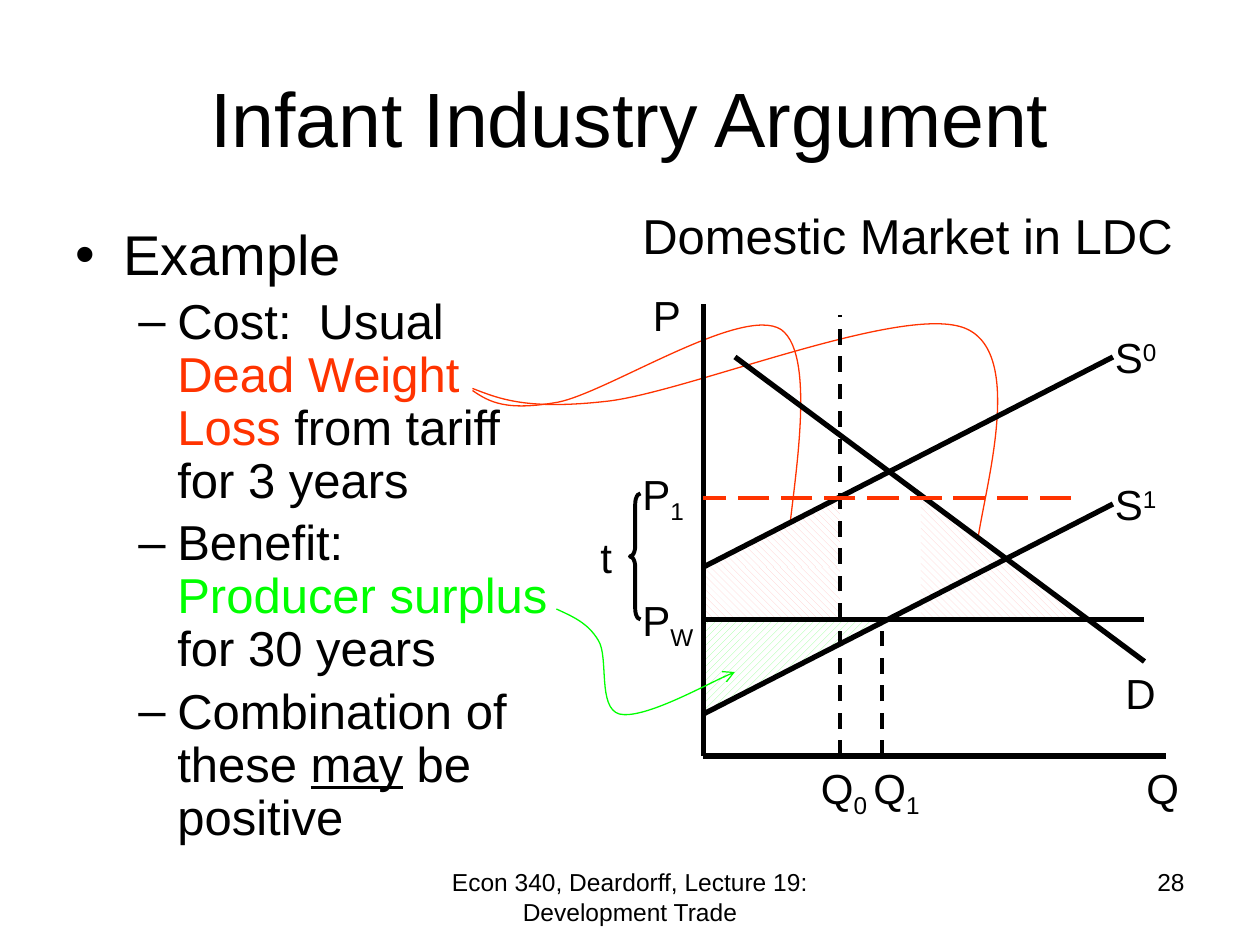
from lxml import etree
from pptx import Presentation
from pptx import util as u
from pptx.dml.color import RGBColor
from pptx.enum import dml, shapes, text
from pptx.oxml import ns

COLORS = {"black": "000000", "white": "FFFFFF", "red": "FF3300", "green": "00FF00",
          "pink": "FFCCCC", "mint": "99FF99"}
FONT = "Arial"
GRID = 12
SUB, SUPER = -25000, 30000

TITLE = ("Infant Industry Argument", (6, 3.6, 108, 15))
BODY_AREA = (6, 21, 49, 59.4)
BODY = [
    (0, [("Example", "black", False)]),
    (1, [("Cost:  Usual ", "black", False), ("Dead Weight Loss", "red", False),
         (" from tariff for 3 years", "black", False)]),
    (1, [("Benefit:  ", "black", False), ("Producer surplus", "green", False),
         (" for 30 years", "black", False)]),
    (1, [("Combination of these ", "black", False), ("may", "black", True),
         (" be positive", "black", False)]),
]
LEVELS = [("•", 32, 0.38, 0.38, 0), ("–", 28, 0.81, 0.31, 5.6)]

CAPTIONS = [
    ("Econ 340, Deardorff, Lecture 19: Development Trade", (41, 82, 38, 6.25), 14, "CENTER"),
    ("28", (86, 82, 28, 6.25), 14, "RIGHT"),
    ("Domestic Market in LDC", (60, 19, 54, 6.8), 28, "LEFT"),
]
LABELS = [
    ("P", "", 0, 61, 27, 8), ("P", "1", SUB, 60, 44, 8), ("P", "W", SUB, 60, 56, 8),
    ("t", "", 0, 56, 50, 6), ("Q", "0", SUB, 77, 72, 8), ("Q", "1", SUB, 82, 72, 8),
    ("Q", "", 0, 108, 72, 6), ("D", "", 0, 106, 63, 6),
    ("S", "0", SUPER, 105, 31, 7), ("S", "1", SUPER, 105, 45, 7),
]

AXIS, RIGHT, BASE = 67, 109, 72
WORLD_PRICE, TARIFF_PRICE = 59, 47.4
LINES = [
    ((AXIS, 29), (AXIS, BASE), "black", 3, None),
    ((111, BASE), (AXIS, BASE), "black", 3, None),
    ((RIGHT, WORLD_PRICE), (AXIS, WORLD_PRICE), "black", 3, None),
    ((106, 48), (AXIS, 68), "black", 3, None),
    ((106, 34), (AXIS, 54), "black", 3, None),
    ((RIGHT, 63), (70, 34), "black", 3, None),
    ((80, BASE), (80, 30), "black", 2.25, "DASH"),
    ((84, BASE), (84, WORLD_PRICE), "black", 2.25, "DASH"),
    ((102, TARIFF_PRICE), (AXIS, TARIFF_PRICE), "red", 2.25, "LONG_DASH"),
]
AREAS = [
    ("RIGHT_TRIANGLE", (AXIS, WORLD_PRICE, 17, 9), "mint", "WIDE_UPWARD_DIAGONAL", "flipV"),
    ("RECTANGLE", (AXIS, 54, 13, 5), "pink", "WIDE_DOWNWARD_DIAGONAL", None),
    ("RIGHT_TRIANGLE", (87.7, 47, 16.3, 12), "pink", "WIDE_DOWNWARD_DIAGONAL", None),
    ("RIGHT_TRIANGLE", (AXIS, 47, 13, 7), "pink", "WIDE_DOWNWARD_DIAGONAL", "flipH"),
]
BRACE = (60, 47, 1, 12)
LOSS_CURVES = [
    [(45, 37), (47.6, 38), (50.2, 39.1), (58, 38.2), (65.9, 37.2), (86.2, 28.8),
     (92, 31.3), (97.8, 33.8), (92.9, 49.4), (93, 53)],
    [(45, 37.2), (46.6, 38.3), (48.2, 39.2), (53.2, 38.3), (58, 37.3), (70.7, 29),
     (74.4, 31.4), (78, 34), (74.9, 49.6), (75, 53.2)],
]
SURPLUS_CURVE = [(53, 58), (54.5, 58.7), (56, 59.3), (57, 61), (58, 62.6), (56.9, 67.4),
                 (59, 68), (61.2, 68.5), (68.2, 64.7), (70, 64)]


def place(*cells):
    return [u.Inches(cell / GRID) for cell in cells]


def color(name):
    return RGBColor.from_string(COLORS[name])


def add_run(paragraph, words, size, tint="black"):
    run = paragraph.add_run()
    run.text = words
    run.font.name, run.font.size = FONT, u.Pt(size)
    run.font.color.rgb = color(tint)
    return run


def add_box(slide, area):
    frame = slide.shapes.add_textbox(*place(*area)).text_frame
    frame.word_wrap = True
    return frame


def style_line(line, tint, width):
    line.color.rgb = color(tint)
    line.width = u.Pt(width)


def add_title(slide):
    words, area = TITLE
    title = slide.shapes.title
    title.left, title.top, title.width, title.height = place(*area)
    title.text_frame.vertical_anchor = text.MSO_ANCHOR.MIDDLE
    paragraph = title.text_frame.paragraphs[0]
    paragraph.alignment = text.PP_ALIGN.CENTER
    add_run(paragraph, words, 44)


def add_body(slide):
    frame = add_box(slide, BODY_AREA)
    for index, (level, runs) in enumerate(BODY):
        bullet, size, margin, hanging, before = LEVELS[level]
        paragraph = frame.add_paragraph() if index else frame.paragraphs[0]
        paragraph.level = level
        paragraph.line_spacing = 0.9
        paragraph.space_before = u.Pt(before)
        properties = paragraph._p.get_or_add_pPr()
        properties.set("marL", str(u.Inches(margin)))
        properties.set("indent", str(-u.Inches(hanging)))
        etree.SubElement(properties, ns.qn("a:buFont")).set("typeface", FONT)
        etree.SubElement(properties, ns.qn("a:buChar")).set("char", bullet)
        for words, tint, underlined in runs:
            run = add_run(paragraph, words, size, tint)
            if underlined:
                run.font.underline = True


def add_caption(slide, words, area, size, alignment):
    paragraph = add_box(slide, area).paragraphs[0]
    paragraph.alignment = text.PP_ALIGN[alignment]
    add_run(paragraph, words, size)


def add_label(slide, letter, index, baseline, left, top, width):
    paragraph = add_box(slide, (left, top, width, 6)).paragraphs[0]
    add_run(paragraph, letter, 24)
    if index:
        run = add_run(paragraph, index, 24)
        run.font._element.set("baseline", str(baseline))


def add_area(slide, kind, area, tint, pattern, flip):
    shape = slide.shapes.add_shape(shapes.MSO_SHAPE[kind], *place(*area))
    shape.shadow.inherit = False
    shape.line.fill.background()
    shape.fill.patterned()
    shape.fill.pattern = dml.MSO_PATTERN[pattern]
    shape.fill.fore_color.rgb = color(tint)
    shape.fill.back_color.rgb = color("white")
    if flip:
        shape.element.spPr.find(ns.qn("a:xfrm")).set(flip, "1")


def add_line(slide, start, end, tint, width, dash):
    line = slide.shapes.add_connector(shapes.MSO_CONNECTOR.STRAIGHT, *place(*start, *end))
    style_line(line.line, tint, width)
    if dash:
        line.line.dash_style = dml.MSO_LINE[dash]
    etree.SubElement(line.element.spPr, ns.qn("a:effectLst"))


def add_curve(slide, points, tint):
    start, *controls = [place(*point) for point in points]
    builder = slide.shapes.build_freeform(*start)
    builder.add_line_segments(controls, close=False)
    curve = builder.convert_to_shape()
    curve.shadow.inherit = False
    curve.fill.background()
    style_line(curve.line, tint, 0.75)
    segments = list(curve.element.iter(ns.qn("a:lnTo")))
    for first in range(0, len(segments), 3):
        bezier = etree.Element(ns.qn("a:cubicBezTo"))
        segments[first].addprevious(bezier)
        for segment in segments[first:first + 3]:
            bezier.append(segment[0])
            segment.getparent().remove(segment)
    outline = curve.element.spPr.find(ns.qn("a:ln"))
    etree.SubElement(outline, ns.qn("a:tailEnd")).set("type", "arrow")


def add_brace(slide):
    brace = slide.shapes.add_shape(shapes.MSO_SHAPE.LEFT_BRACE, *place(*BRACE))
    brace.adjustments[0] = 1
    brace.shadow.inherit = False
    brace.fill.background()
    style_line(brace.line, "black", 2.25)


def main():
    presentation = Presentation()
    presentation.slide_width, presentation.slide_height = u.Inches(10), u.Inches(7.5)
    slide = presentation.slides.add_slide(presentation.slide_layouts.get_by_name("Title Only"))
    add_title(slide)
    add_body(slide)
    for curve in LOSS_CURVES:
        add_curve(slide, curve, "red")
    for area in AREAS:
        add_area(slide, *area)
    for line in LINES:
        add_line(slide, *line)
    add_brace(slide)
    for label in LABELS:
        add_label(slide, *label)
    add_curve(slide, SURPLUS_CURVE, "green")
    for caption in CAPTIONS:
        add_caption(slide, *caption)
    presentation.save("out.pptx")


if __name__ == "__main__":
    main()
